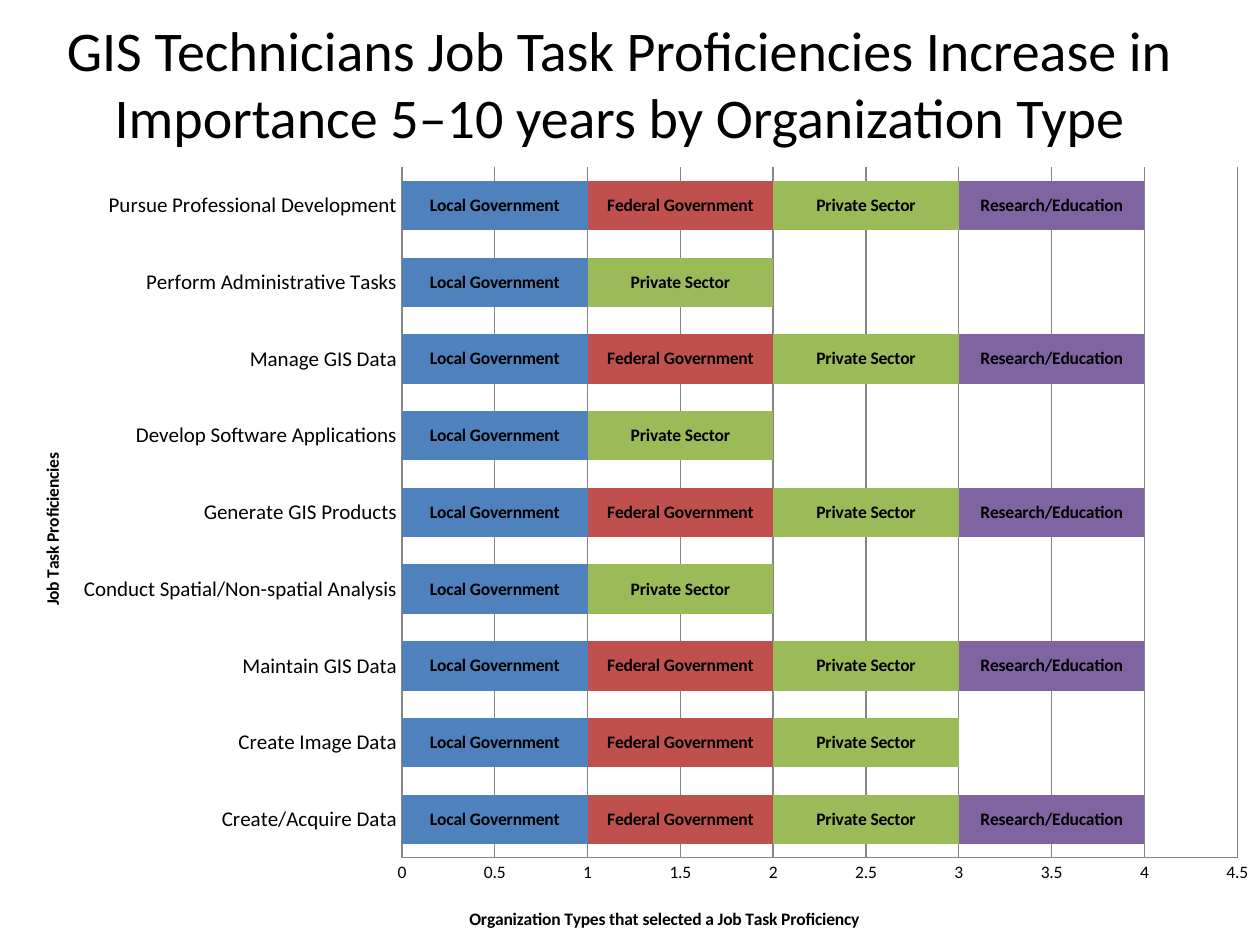
from dataclasses import dataclass

import lxml.etree
import pptx
import pptx.chart.data
import pptx.dml.color
import pptx.enum.chart
import pptx.enum.text
import pptx.oxml.ns
import pptx.util

SLIDE_WIDTH = pptx.util.Inches(10)
SLIDE_HEIGHT = pptx.util.Inches(7.5)
FONT = "Calibri"
BLACK, GREY = "000000", "868686"

TASKS = [
    "Create/Acquire Data",
    "Create Image Data",
    "Maintain GIS Data",
    "Conduct Spatial/Non-spatial Analysis",
    "Generate GIS Products",
    "Develop Software Applications",
    "Manage GIS Data",
    "Perform Administrative Tasks",
    "Pursue Professional Development",
]


@dataclass
class Area:
    """Position and size as shares of the slide."""
    left: float
    top: float
    width: float
    height: float

    def lengths(self) -> tuple[int, int, int, int]:
        return (int(self.left * SLIDE_WIDTH), int(self.top * SLIDE_HEIGHT),
                int(self.width * SLIDE_WIDTH), int(self.height * SLIDE_HEIGHT))


@dataclass
class Organization:
    name: str
    color: str
    selections: tuple[int, ...]


ORGANIZATIONS = [
    Organization("Local Government", "4F81BD", (1,) * 9),
    Organization("Federal Government", "C0504D", (1, 1, 1, 0, 1, 0, 1, 0, 1)),
    Organization("Private Sector", "9BBB59", (1,) * 9),
    Organization("Research/Education", "8064A2", (1, 0, 1, 0, 1, 0, 1, 0, 1)),
]


def rgb(color: str) -> pptx.dml.color.RGBColor:
    return pptx.dml.color.RGBColor.from_string(color)


def style_font(font, size: float, bold: bool = False) -> None:
    font.name = FONT
    font.size = pptx.util.Pt(size)
    font.bold = bold
    font.color.rgb = rgb(BLACK)


def chart_element(parent, tag: str, value=None):
    element = lxml.etree.SubElement(parent, pptx.oxml.ns.qn(f"c:{tag}"))
    if value is not None:
        element.set("val", str(value))
    return element


def set_layout(parent, position: int, inner: bool = False, **shares: float) -> None:
    """Place a chart part by hand, in shares of the chart's size."""
    for old in parent.findall(pptx.oxml.ns.qn("c:layout")):
        parent.remove(old)
    layout = chart_element(parent, "layout")
    manual = chart_element(layout, "manualLayout")
    if inner:
        chart_element(manual, "layoutTarget", "inner")
    for mode in ("xMode", "yMode"):
        chart_element(manual, mode, "edge")
    for tag, share in shares.items():
        chart_element(manual, tag, share)
    parent.insert(position, layout)


def style_axis(axis, title: str, label_size: float, left: float, top: float) -> None:
    frame = axis.axis_title.text_frame
    frame.text = title
    style_font(frame.paragraphs[0].runs[0].font, 10, bold=True)
    set_layout(axis.axis_title._element, 1, x=left, y=top)
    style_font(axis.tick_labels.font, label_size)
    axis.major_tick_mark = pptx.enum.chart.XL_TICK_MARK.NONE
    axis.minor_tick_mark = pptx.enum.chart.XL_TICK_MARK.NONE
    axis.format.line.color.rgb = rgb(GREY)


def style_series(series, organization: Organization) -> None:
    series.format.fill.solid()
    series.format.fill.fore_color.rgb = rgb(organization.color)
    series.invert_if_negative = False
    labels = series.data_labels
    labels.show_series_name = True
    labels.show_value = False
    style_font(labels.font, 10, bold=True)
    # Tasks that were not selected carry no label
    missing = [i for i, value in enumerate(organization.selections) if not value]
    for position, index in enumerate(missing):
        label = chart_element(labels._element, "dLbl")
        chart_element(label, "idx", index)
        chart_element(label, "delete", 1)
        labels._element.insert(position, label)


def add_title(page, text: str, area: Area) -> None:
    box = page.shapes.add_textbox(*area.lengths())
    frame = box.text_frame
    frame.text = text
    frame.word_wrap = True
    frame.vertical_anchor = pptx.enum.text.MSO_ANCHOR.MIDDLE
    para = frame.paragraphs[0]
    para.alignment = pptx.enum.text.PP_ALIGN.CENTER
    style_font(para.runs[0].font, 32)


def add_task_chart(page, area: Area) -> None:
    data = pptx.chart.data.CategoryChartData()
    data.categories = TASKS
    for organization in ORGANIZATIONS:
        data.add_series(organization.name, organization.selections)
    chart = page.shapes.add_chart(
        pptx.enum.chart.XL_CHART_TYPE.BAR_STACKED, *area.lengths(), data).chart
    chart.has_legend = False
    chart.has_title = False
    style_font(chart.font, 10)
    plot = chart.plots[0]
    plot.gap_width = 55
    plot.overlap = 100
    plot.vary_by_categories = False
    for series, organization in zip(plot.series, ORGANIZATIONS):
        style_series(series, organization)

    # Axes and gridlines
    style_axis(chart.category_axis, "Job Task Proficiencies", 12, 0.03, 0.38)
    values = chart.value_axis
    style_axis(values, "Organization Types that selected a Job Task Proficiency",
               10, 0.37, 0.95)
    values.minimum_scale, values.maximum_scale, values.major_unit = 0, 4.5, 0.5
    values.has_major_gridlines = True
    values.major_gridlines.format.line.color.rgb = rgb(GREY)
    plot_area = chart._chartSpace.chart.plotArea
    set_layout(plot_area, 0, inner=True, x=0.319, y=0.026, w=0.663, h=0.866)


def main() -> None:
    deck = pptx.Presentation()
    deck.slide_width, deck.slide_height = SLIDE_WIDTH, SLIDE_HEIGHT
    page = deck.slides.add_slide(deck.slide_layouts[6])
    add_task_chart(page, Area(0, 0.155, 1, 0.844))
    add_title(page, "GIS Technicians Job Task Proficiencies Increase in "
              "Importance 5–10 years by Organization Type",
              Area(0.042, 0.004, 0.9, 0.167))
    deck.save("out.pptx")


if __name__ == "__main__":
    main()
